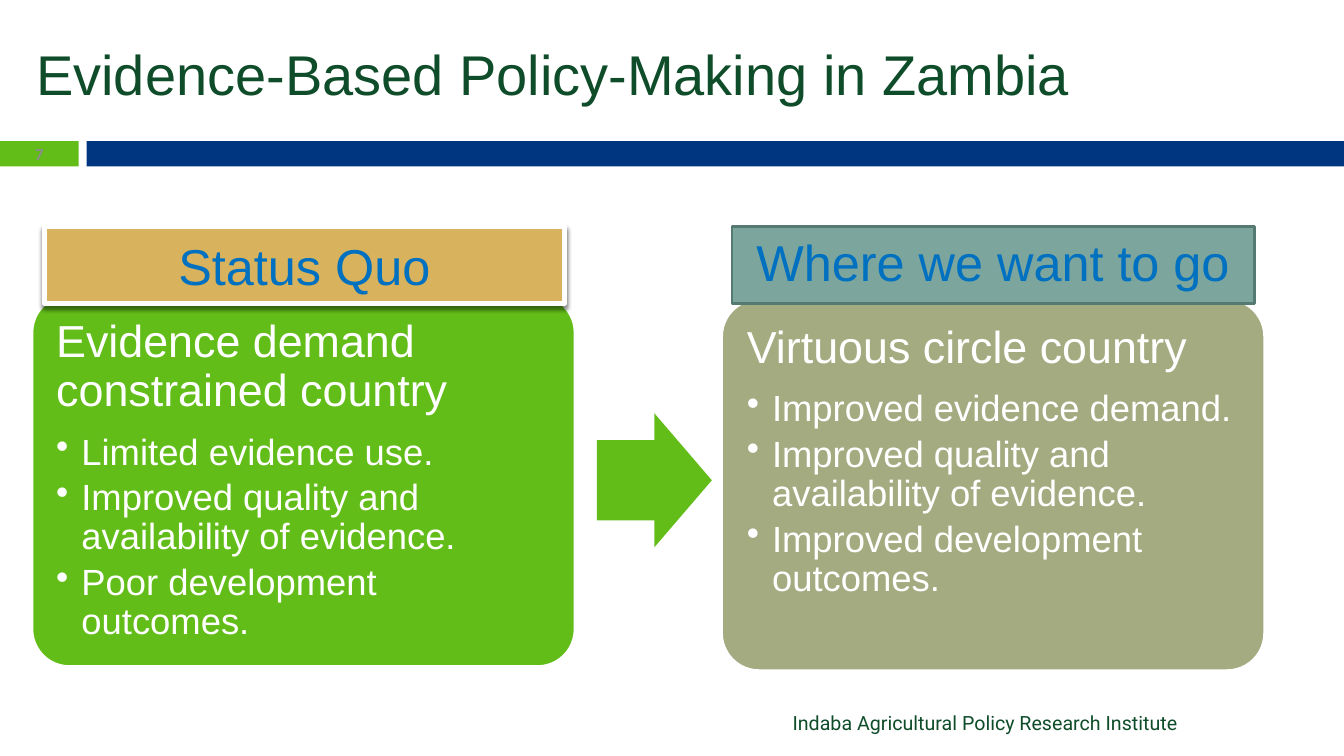
from dataclasses import dataclass

from lxml.etree import SubElement
from pptx import Presentation
from pptx.dml.color import RGBColor
from pptx.enum.shapes import MSO_SHAPE as Shape
from pptx.enum.text import MSO_ANCHOR as Anchor, PP_ALIGN as Align
from pptx.oxml.ns import qn
from pptx.util import Inches, Pt


@dataclass(frozen=True)
class Theme:
    font: str = "Arial"
    number_font: str = "Calibri"
    footer_font: str = "Roboto"
    green: str = "62BD19"
    navy: str = "003580"
    forest: str = "0F4D2A"
    blue: str = "0070C0"
    gold: str = "D8B25C"
    teal: str = "7CA69D"
    teal_edge: str = "557A72"
    olive: str = "A5AB81"
    grey: str = "8C8C8C"
    white: str = "FFFFFF"
    title: float = 40
    label: float = 36
    heading: float = 32
    bullet: float = 26
    footer: float = 14
    number: float = 11.9


THEME = Theme()


def add_block(page, box, fill, kind=Shape.RECTANGLE, edge=None, edge_width=0):
    shape = page.shapes.add_shape(kind, *map(Inches, box))
    shape.shadow.inherit = False
    shape.fill.solid()
    shape.fill.fore_color.rgb = RGBColor.from_string(fill)
    if edge:
        shape.line.color.rgb = RGBColor.from_string(edge)
        shape.line.width = Pt(edge_width)
    else:
        shape.line.fill.background()
    return shape


def style(para, size, color, font=THEME.font, align=Align.LEFT, bold=False):
    para.alignment = align
    para.font.size = Pt(size)
    para.font.name = font
    para.font.bold = bold
    para.font.color.rgb = RGBColor.from_string(color)


def write_line(shape, text, *args, anchor=Anchor.MIDDLE, **kwargs):
    """Put one styled paragraph in a shape."""
    frame = shape.text_frame
    frame.word_wrap = True
    frame.vertical_anchor = anchor
    para = frame.paragraphs[0]
    para.text = text
    style(para, *args, **kwargs)
    return para


def add_text(page, box, *args, **kwargs):
    shape = page.shapes.add_textbox(*map(Inches, box))
    write_line(shape, *args, anchor=Anchor.TOP, **kwargs)


def add_bullet(para):
    properties = para._p.get_or_add_pPr()
    properties.set("marL", str(Inches(0.25)))
    properties.set("indent", str(-Inches(0.25)))
    SubElement(properties, qn("a:buChar"), char="•")


def add_drop_shadow(shape):
    effects = shape._element.spPr.find(qn("a:effectLst"))
    shadow = SubElement(effects, qn("a:outerShdw"), blurRad=str(Pt(3)),
                        dist=str(Pt(2.4)), dir="5400000", rotWithShape="0")
    black = SubElement(shadow, qn("a:srgbClr"), val="000000")
    SubElement(black, qn("a:alpha"), val="45000")


def add_header(page, box):
    left, top, width, height = box
    add_text(page, (left + 0.26, top + 0.34, 12.45, 0.77),
             "Evidence-Based Policy-Making in Zambia", THEME.title, THEME.forest)
    tab, gap, bar_top, bar_height = 0.78, 0.08, top + 1.4, 0.25
    number = add_block(page, (left, bar_top, tab, bar_height), THEME.green)
    write_line(number, "7", THEME.number, THEME.grey, THEME.number_font,
               Align.CENTER, bold=True)
    add_block(page, (left + tab + gap, bar_top, width - tab - gap, bar_height),
              THEME.navy)


def add_panel(page, box, fill, inset, heading, bullets):
    panel = add_block(page, box, fill, Shape.ROUNDED_RECTANGLE, THEME.white, 1.5)
    panel.adjustments[0] = 0.1
    frame = panel.text_frame
    frame.word_wrap = True
    frame.vertical_anchor = Anchor.TOP
    frame.margin_left = frame.margin_right = Inches(inset)
    frame.margin_top = frame.margin_bottom = Inches(inset)
    for index, text in enumerate([heading, *bullets]):
        para = frame.add_paragraph() if index else frame.paragraphs[0]
        para.text = text
        para.line_spacing = 0.9
        para.space_after = Pt(4.5 if index else 12.5)
        if index:
            para.level = 1
            add_bullet(para)
        style(para, THEME.bullet if index else THEME.heading, THEME.white)


def add_label(page, box, text, fill, edge, edge_width):
    label = add_block(page, box, fill, edge=edge, edge_width=edge_width)
    para = write_line(label, text, THEME.label, THEME.blue, align=Align.CENTER)
    return label, para


def add_comparison(page, box):
    left, top, width, height = box
    arrow = add_block(page, (left + 5.6, top + 1.85, 1.14, 1.33), THEME.green,
                      Shape.RIGHT_ARROW)
    arrow.adjustments[0] = 0.6
    arrow.adjustments[1] = 0.5

    panel_width, panel_height = 5.38, 3.68
    right = left + width - panel_width
    add_panel(page, (right, top + 0.72, panel_width, panel_height), THEME.olive,
              0.14, "Virtuous circle country",
              ["Improved evidence demand.",
               "Improved quality and availability of evidence.",
               "Improved development outcomes."])
    add_panel(page, (left, top + 0.68, panel_width, panel_height), THEME.green,
              0.13, "Evidence demand constrained country",
              ["Limited evidence use.",
               "Improved quality and availability of evidence.",
               "Poor development outcomes."])

    status, _ = add_label(page, (left + 0.12, top, 5.16, 0.76), "Status Quo",
                          THEME.gold, THEME.white, 3.75)
    add_drop_shadow(status)
    _, goal = add_label(page, (right + 0.1, top, 5.18, 0.76),
                        "Where we want to go", THEME.teal, THEME.teal_edge, 2)
    goal.line_spacing = 0.9


def add_footer(page, box):
    add_text(page, box, "Indaba Agricultural Policy Research Institute",
             THEME.footer, THEME.forest, THEME.footer_font, Align.RIGHT)


def main():
    deck = Presentation()
    deck.slide_width = Inches(13.33)
    deck.slide_height = Inches(7.5)
    page = deck.slides.add_slide(deck.slide_layouts[6])
    add_header(page, (0, 0, 13.33, 1.65))
    add_comparison(page, (0.32, 2.25, 12.22, 4.4))
    add_footer(page, (6.11, 7, 5.67, 0.34))
    deck.save("out.pptx")


if __name__ == "__main__":
    main()
